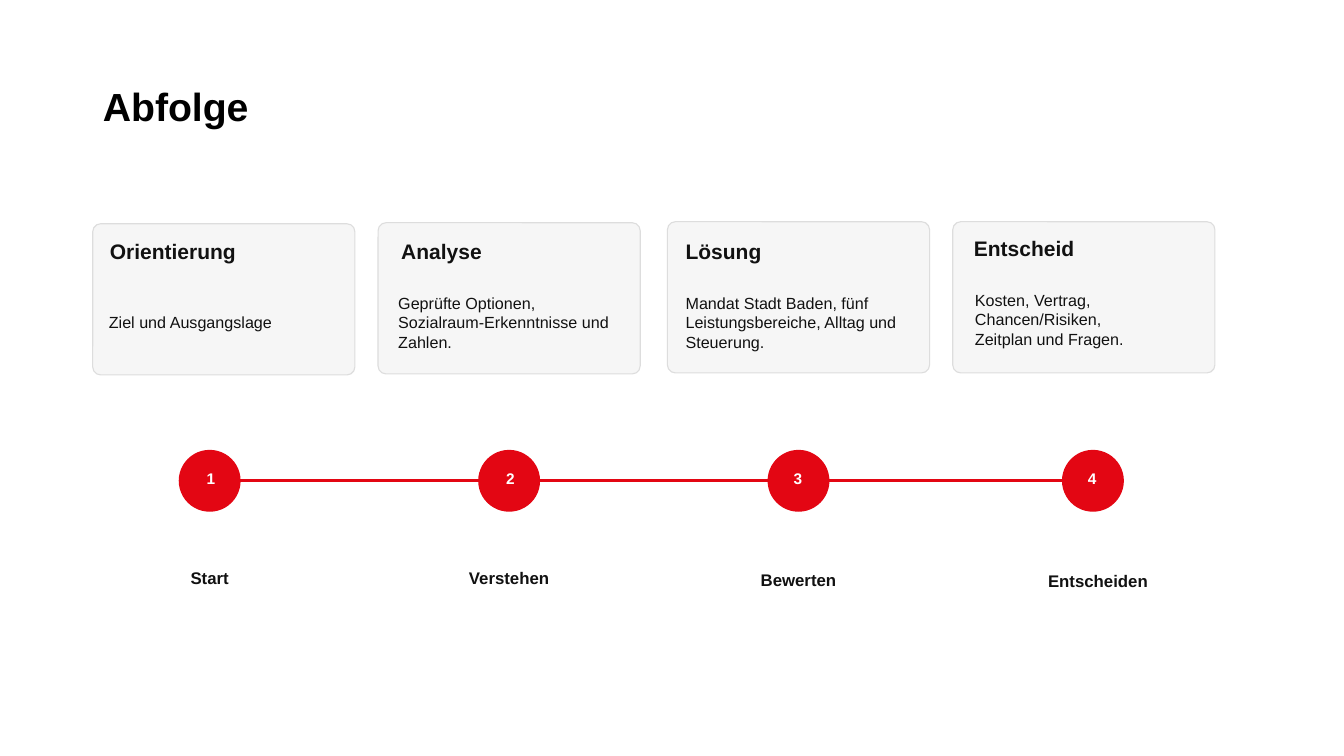
from dataclasses import dataclass

from lxml import etree
from pptx import Presentation
from pptx.dml.color import RGBColor
from pptx.enum.shapes import MSO_CONNECTOR, MSO_SHAPE
from pptx.enum.text import MSO_ANCHOR, PP_ALIGN
from pptx.oxml.ns import qn
from pptx.util import Inches, Pt

ROUNDED = MSO_SHAPE.ROUNDED_RECTANGLE
OVAL = MSO_SHAPE.OVAL
STRAIGHT = MSO_CONNECTOR.STRAIGHT
MIDDLE = MSO_ANCHOR.MIDDLE
LEFT, CENTER = PP_ALIGN.LEFT, PP_ALIGN.CENTER


@dataclass(frozen=True)
class Theme:
    font: str = "Arial"
    black: RGBColor = RGBColor(0x00, 0x00, 0x00)
    ink: RGBColor = RGBColor(0x11, 0x11, 0x11)
    white: RGBColor = RGBColor(0xFF, 0xFF, 0xFF)
    red: RGBColor = RGBColor(0xE3, 0x06, 0x13)
    card: RGBColor = RGBColor(0xF6, 0xF6, 0xF6)
    border: RGBColor = RGBColor(0xDD, 0xDD, 0xDD)
    title: float = 28
    heading: float = 15
    body: float = 11.5
    label: float = 12
    number: float = 11


THEME = Theme()
CARD_W, CARD_H = 2.6, 1.5
DOT, DOT_TOP = 0.6, 4.47
LINE_Y = DOT_TOP + DOT / 2

# Card: left, top, heading (left, top), body (left, top), text width, wording
CARDS = [
    (0.92, 2.22, (1.09, 2.36), (1.08, 2.75), 2.24,
     "Orientierung", "Ziel und Ausgangslage"),
    (3.75, 2.21, (3.98, 2.36), (3.95, 2.75), 2.24,
     "Analyse", "Geprüfte Optionen, Sozialraum-Erkenntnisse und Zahlen."),
    (6.62, 2.2, (6.8, 2.36), (6.8, 2.75), 2.24,
     "Lösung", "Mandat Stadt Baden, fünf Leistungsbereiche, Alltag und Steuerung."),
    (9.45, 2.2, (9.66, 2.33), (9.67, 2.72), 1.74,
     "Entscheid", "Kosten, Vertrag, Chancen/Risiken, Zeitplan und Fragen."),
]

# Milestone: dot left, number left, label (left, top), label wording
MILESTONES = [
    (1.78, 2.05, (1.43, 5.61), "Start"),
    (4.75, 5.02, (4.4, 5.61), "Verstehen"),
    (7.62, 7.87, (7.27, 5.63), "Bewerten"),
    (10.54, 10.79, (10.24, 5.64), "Entscheiden"),
]


def add_text(s, text, x, y, w, h, size, color=THEME.ink, bold=True, align=LEFT):
    tf = s.shapes.add_textbox(Inches(x), Inches(y), Inches(w), Inches(h)).text_frame
    tf.word_wrap = True
    tf.vertical_anchor = MIDDLE
    tf.margin_left = tf.margin_right = tf.margin_top = tf.margin_bottom = 0
    p = tf.paragraphs[0]
    p.alignment = align
    r = p.add_run()
    r.text = text
    r.font.name = THEME.font
    r.font.size = Pt(size)
    r.font.bold = bold
    r.font.color.rgb = color


def add_box(s, kind, x, y, w, h, fill, line, line_width):
    sp = s.shapes.add_shape(kind, Inches(x), Inches(y), Inches(w), Inches(h))
    sp.shadow.inherit = False
    sp.fill.solid()
    sp.fill.fore_color.rgb = fill
    sp.line.color.rgb = line
    sp.line.width = Pt(line_width)
    return sp


def add_arrow(s, x1, x2, y):
    arrow = s.shapes.add_connector(STRAIGHT, Inches(x1), Inches(y), Inches(x2), Inches(y))
    arrow.line.color.rgb = THEME.red
    arrow.line.width = Pt(2)
    etree.SubElement(arrow.line._get_or_add_ln(), qn("a:tailEnd"), type="triangle")
    etree.SubElement(arrow._element.spPr, qn("a:effectLst"))


def add_card(s, x, y, heading_at, body_at, text_w, heading, body):
    sp = add_box(s, ROUNDED, x, y, CARD_W, CARD_H, THEME.card, THEME.border, 0.8)
    sp.adjustments[0] = 0.053
    add_text(s, heading, *heading_at, text_w, 0.27, THEME.heading)
    add_text(s, body, *body_at, text_w, 0.9, THEME.body, bold=False)


def add_milestone(s, number, dot_x, number_x, label_at, label):
    add_box(s, OVAL, dot_x, DOT_TOP, DOT, DOT, THEME.red, THEME.red, 1)
    add_text(s, str(number), number_x, 4.65, 0.25, 0.2, THEME.number, THEME.white)
    add_text(s, label, *label_at, 1.3, 0.25, THEME.label, align=CENTER)


def main():
    prs = Presentation()
    prs.slide_width, prs.slide_height = Inches(13.33), Inches(7.5)
    s = prs.slides.add_slide(prs.slide_layouts[6])

    # Title
    add_text(s, "Abfolge", 1.02, 0.75, 10.08, 0.6, THEME.title, THEME.black)

    # Cards
    for card in CARDS:
        add_card(s, *card)

    # Timeline
    add_arrow(s, 1.87, 10.77, LINE_Y)
    for number, milestone in enumerate(MILESTONES, start=1):
        add_milestone(s, number, *milestone)

    prs.save("out.pptx")


if __name__ == "__main__":
    main()
